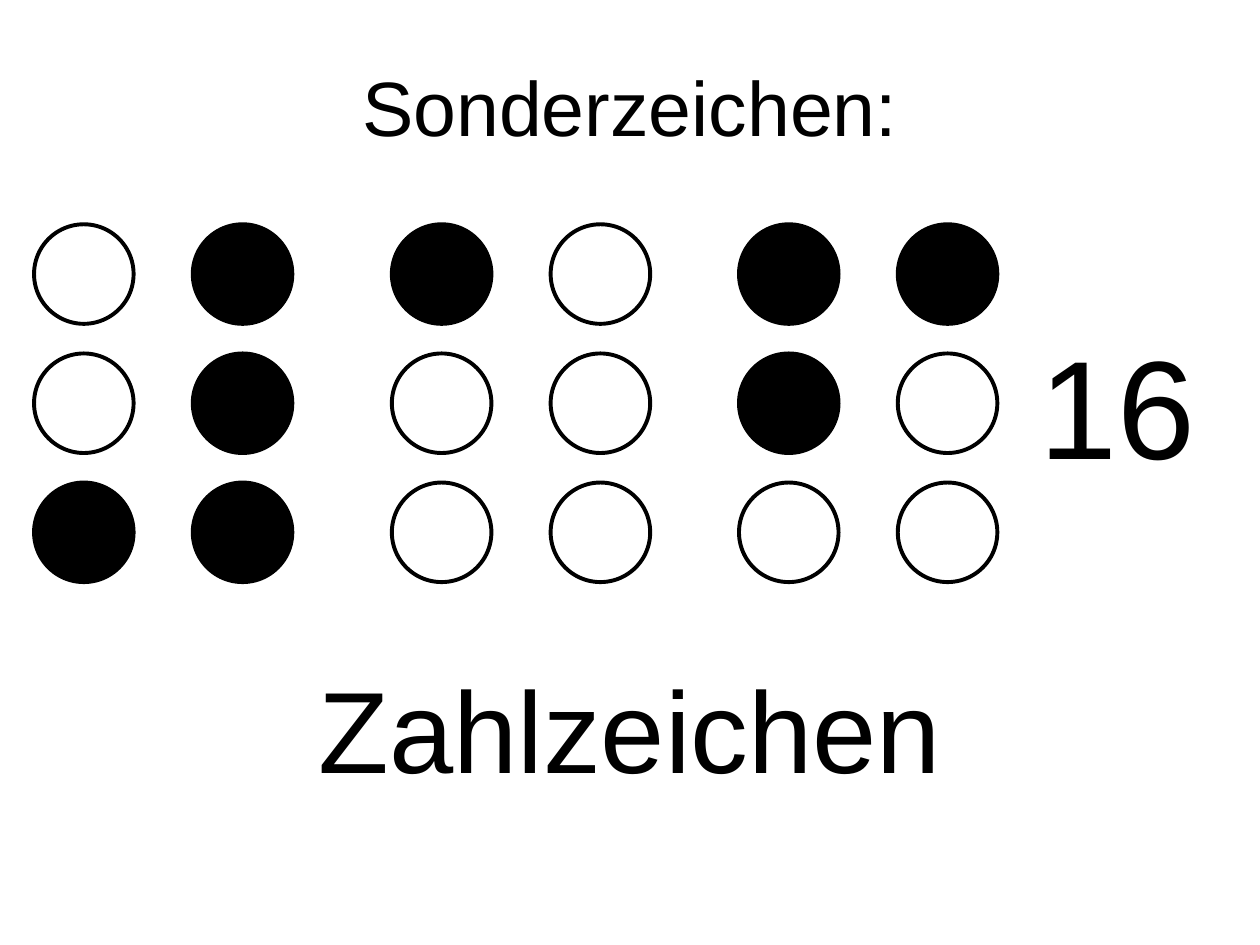
from dataclasses import dataclass

from pptx import Presentation
from pptx.dml.color import RGBColor
from pptx.enum.shapes import MSO_SHAPE
from pptx.enum.text import MSO_ANCHOR, PP_ALIGN
from pptx.util import Inches, Pt

OVAL = MSO_SHAPE.OVAL
CENTER, LEFT = PP_ALIGN.CENTER, PP_ALIGN.LEFT
TOP, MIDDLE = MSO_ANCHOR.TOP, MSO_ANCHOR.MIDDLE

# Grid of 100 columns by 75 rows on the slide
COLUMNS, ROWS = 100, 75

# Braille cells: left column, then dots row by row (1 = raised)
CELLS = [
    (2.7, ("01", "01", "11")),
    (31.1, ("10", "00", "00")),
    (58.65, ("11", "10", "00")),
]
DOTS_TOP = 17.8
DOT_SIZE = 7.9
DOT_STEP_X, DOT_STEP_Y = 12.6, 10.25


@dataclass(frozen=True)
class Theme:
    font: str = "Arial"
    ink: RGBColor = RGBColor(0, 0, 0)
    paper: RGBColor = RGBColor(255, 255, 255)
    title_size: int = 44
    caption_size: int = 66
    number_size: int = 80
    outline: float = 2.25


class BrailleSlide:
    def __init__(self, presentation, theme):
        self.theme = theme
        self.slide = presentation.slides.add_slide(presentation.slide_layouts[6])
        self.column = presentation.slide_width / COLUMNS
        self.row = presentation.slide_height / ROWS
        background = self.slide.background.fill
        background.solid()
        background.fore_color.rgb = theme.paper

    def box(self, left, top, width, height):
        return (round(left * self.column), round(top * self.row),
                round(width * self.column), round(height * self.row))

    def label(self, text, place, size, align=CENTER, anchor=TOP, wrap=True):
        frame = self.slide.shapes.add_textbox(*self.box(*place)).text_frame
        frame.word_wrap = wrap
        frame.vertical_anchor = anchor
        frame.text = text
        paragraph = frame.paragraphs[0]
        paragraph.alignment = align
        font = paragraph.runs[0].font
        font.name = self.theme.font
        font.size = Pt(size)
        font.color.rgb = self.theme.ink

    def dot(self, cell, left, top, raised):
        circle = cell.shapes.add_shape(OVAL, *self.box(left, top, DOT_SIZE, DOT_SIZE))
        circle.shadow.inherit = False
        circle.line.color.rgb = self.theme.ink
        circle.line.width = Pt(self.theme.outline)
        if raised:
            circle.fill.solid()
            circle.fill.fore_color.rgb = self.theme.ink
        else:
            circle.fill.background()

    def braille_cell(self, left, pattern):
        cell = self.slide.shapes.add_group_shape()
        for row, marks in enumerate(pattern):
            for column, mark in enumerate(marks):
                self.dot(cell, left + column * DOT_STEP_X,
                         DOTS_TOP + row * DOT_STEP_Y, mark == "1")


def main():
    presentation = Presentation()
    presentation.slide_width = Inches(10)
    presentation.slide_height = Inches(7.5)
    theme = Theme()
    page = BrailleSlide(presentation, theme)

    # Heading, meaning and number
    page.label("Sonderzeichen:", (0, 2.1, COLUMNS, 12.5), theme.title_size, anchor=MIDDLE)
    page.label("Zahlzeichen", (0, 51.7, COLUMNS, 12), theme.caption_size)
    page.label("16", (81.5, 24.9, 14.4, 14.3), theme.number_size, align=LEFT, wrap=False)

    # Number sign followed by the two digits
    for left, pattern in CELLS:
        page.braille_cell(left, pattern)

    presentation.save("out.pptx")


if __name__ == "__main__":
    main()
